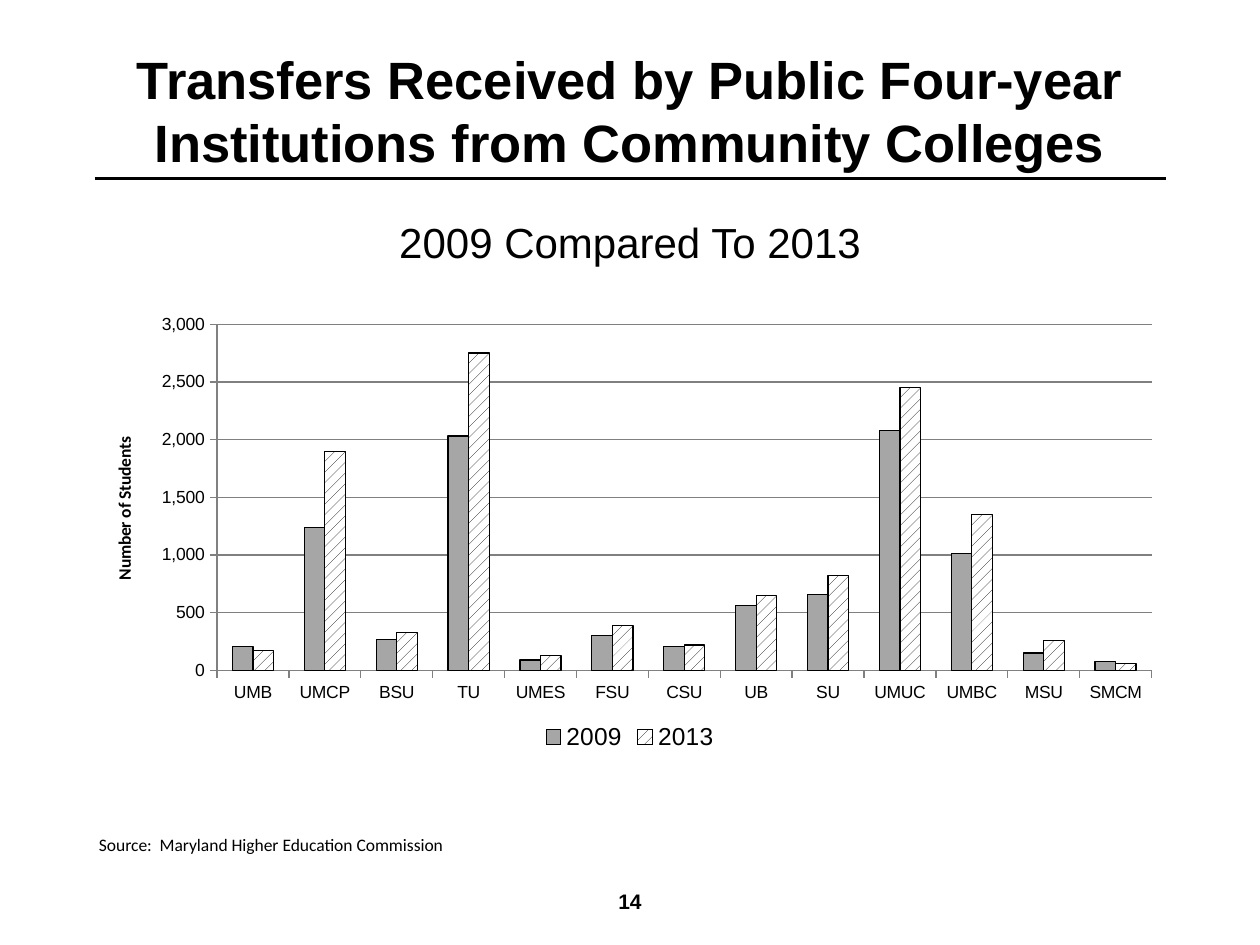
from lxml import etree
from pptx import Presentation
from pptx.chart.data import CategoryChartData
from pptx.dml.color import RGBColor
from pptx.enum import chart as ch, dml, shapes, text
from pptx.oxml import ns
from pptx.util import Pt

COLORS = {"ink": "000000", "paper": "FFFFFF", "bar": "A6A6A6", "grid": "808080"}
TRANSFERS = [
    ("UMB", 210, 170), ("UMCP", 1240, 1900), ("BSU", 270, 330),
    ("TU", 2030, 2750), ("UMES", 90, 130), ("FSU", 300, 390),
    ("CSU", 210, 220), ("UB", 560, 650), ("SU", 660, 820),
    ("UMUC", 2080, 2450), ("UMBC", 1010, 1350), ("MSU", 150, 260),
    ("SMCM", 80, 60),
]
PLOT = {"x": 0.12, "y": 0.04, "w": 0.86, "h": 0.77}


def rgb(name):
    return RGBColor.from_string(COLORS[name])


def set_font(font, name, size, bold=False):
    for key, value in {"name": name, "size": Pt(size), "bold": bold}.items():
        setattr(font, key, value)
    font.color.rgb = rgb("ink")


def set_line(line, color, width):
    line.color.rgb = rgb(color)
    line.width = Pt(width)


def add_text(s, box, words, name, size, bold=False,
             align=text.PP_ALIGN.CENTER, anchor=text.MSO_ANCHOR.TOP):
    sp = s.shapes.add_textbox(*map(Pt, box))
    tf = sp.text_frame
    for key, value in {"word_wrap": True, "vertical_anchor": anchor}.items():
        setattr(tf, key, value)
    p = tf.paragraphs[0]
    p.alignment = align
    r = p.add_run()
    r.text = words
    set_font(r.font, name, size, bold)


def add_header(s, box):
    left, top, width, height = box
    add_text(s, box,
             "Transfers Received by Public Four-year Institutions from Community Colleges",
             "Arial", 30, True, anchor=text.MSO_ANCHOR.MIDDLE)
    rule = s.shapes.add_connector(
        shapes.MSO_CONNECTOR.STRAIGHT,
        Pt(left), Pt(top + height), Pt(left + width), Pt(top + height))
    set_line(rule.line, "ink", 1.5)
    etree.SubElement(rule._element.spPr, ns.qn("a:effectLst"))


def place_plot(chart):
    area = chart._chartSpace.chart.plotArea
    for old in area.findall(ns.qn("c:layout")):
        area.remove(old)
    layout = etree.Element(ns.qn("c:layout"))
    area.insert(0, layout)
    manual = etree.SubElement(layout, ns.qn("c:manualLayout"))
    settings = {"layoutTarget": "inner", "xMode": "edge", "yMode": "edge", **PLOT}
    for tag, value in settings.items():
        etree.SubElement(manual, ns.qn("c:" + tag)).set("val", str(value))


def style_axes(chart):
    for axis in (chart.category_axis, chart.value_axis):
        axis.major_tick_mark = ch.XL_TICK_MARK.OUTSIDE
        set_font(axis.tick_labels.font, "Arial", 10)
        set_line(axis.format.line, "grid", 0.75)
    axis = chart.value_axis
    for key, value in {"minimum_scale": 0, "maximum_scale": 3000,
                       "major_unit": 500}.items():
        setattr(axis, key, value)
    axis.tick_labels.number_format = "#,##0"
    axis.tick_labels.number_format_is_linked = False
    set_line(axis.major_gridlines.format.line, "grid", 0.75)
    p = axis.axis_title.text_frame.paragraphs[0]
    r = p.add_run()
    r.text = "Number of Students"
    set_font(r.font, "Calibri", 10, True)


def add_transfer_chart(s, box):
    names, before, after = zip(*TRANSFERS)
    data = CategoryChartData()
    data.categories = names
    data.add_series("2009", before)
    data.add_series("2013", after)
    chart = s.shapes.add_chart(
        ch.XL_CHART_TYPE.COLUMN_CLUSTERED, *map(Pt, box), data).chart
    chart.has_title = False
    set_font(chart.font, "Calibri", 10)
    style_axes(chart)
    place_plot(chart)

    plot = chart.plots[0]
    for key, value in {"gap_width": 150, "overlap": 0,
                       "vary_by_categories": False}.items():
        setattr(plot, key, value)
    solid, hatched = (series.format for series in plot.series)
    solid.fill.solid()
    solid.fill.fore_color.rgb = rgb("bar")
    hatched.fill.patterned()
    hatched.fill.pattern = dml.MSO_PATTERN.PERCENT_20
    hatched.fill.fore_color.rgb = rgb("ink")
    hatched.fill.back_color.rgb = rgb("paper")
    for form in (solid, hatched):
        set_line(form.line, "ink", 0.75)

    chart.has_legend = True
    chart.legend.position = ch.XL_LEGEND_POSITION.BOTTOM
    chart.legend.include_in_layout = False
    set_font(chart.legend.font, "Arial", 14)


def add_footer(s, box):
    left, top, width, height = box
    add_text(s, (left, top, 216, height),
             "Source:  Maryland Higher Education Commission",
             "Calibri", 10, align=text.PP_ALIGN.LEFT)
    number_width = 228
    add_text(s, (left + (width - number_width) / 2, top + 27.4, number_width, 28.8),
             "14", "Arial", 12, True, anchor=text.MSO_ANCHOR.MIDDLE)


def main():
    prs = Presentation()
    prs.slide_width, prs.slide_height = Pt(720), Pt(540)
    s = prs.slides.add_slide(prs.slide_layouts[6])
    add_header(s, (54, 24, 612, 78))
    add_transfer_chart(s, (49.5, 175, 621, 257))
    add_text(s, (168, 120, 384, 36), "2009 Compared To 2013", "Arial", 24)
    add_footer(s, (49.5, 473, 621, 41))
    prs.save("out.pptx")


if __name__ == "__main__":
    main()
